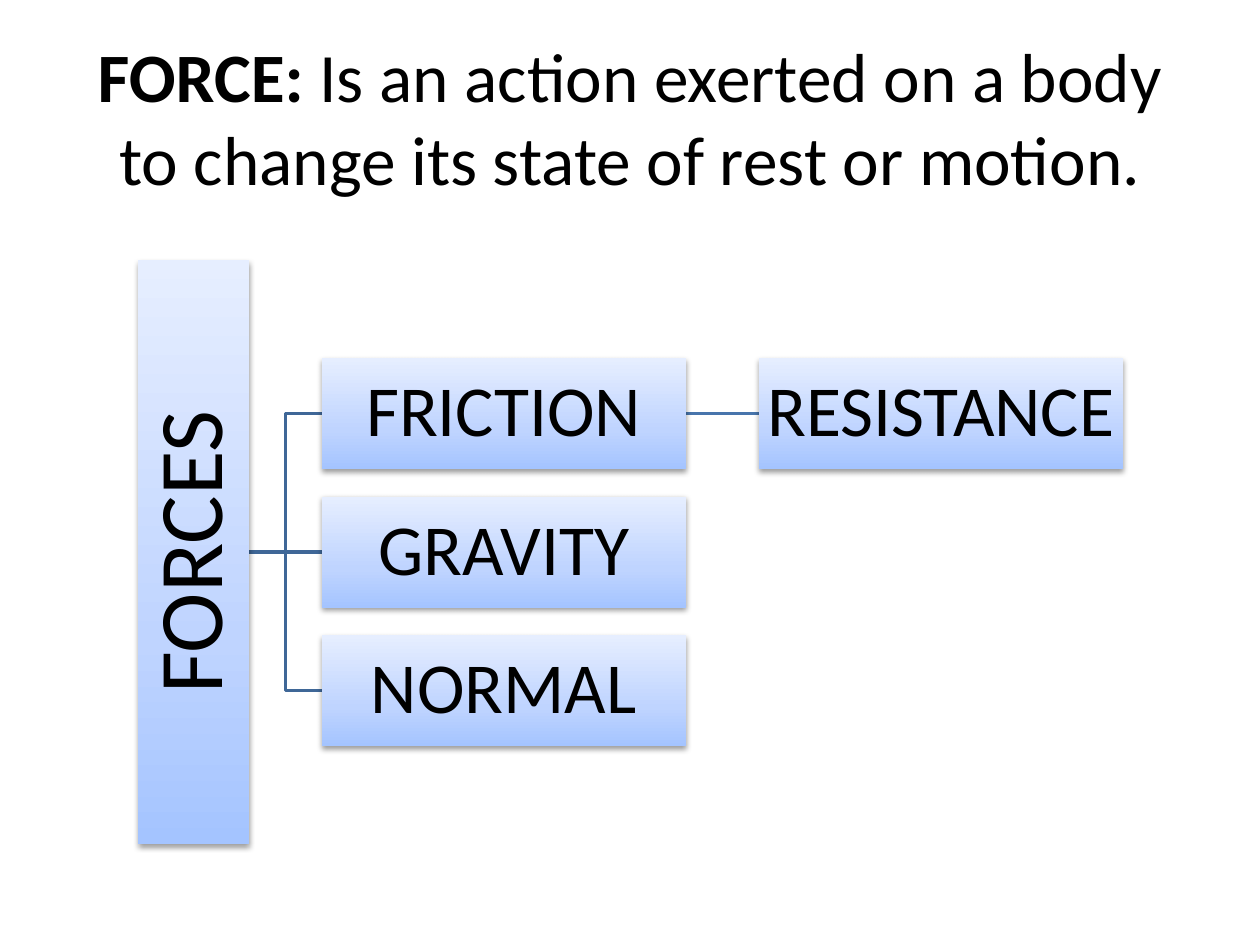
from pptx import Presentation
from pptx.dml.color import RGBColor
from pptx.enum.shapes import MSO_CONNECTOR as Link, MSO_SHAPE as Form
from pptx.enum.text import MSO_ANCHOR as Anchor, PP_ALIGN as Align
from pptx.oxml import parse_xml
from pptx.oxml.ns import nsdecls, qn
from pptx.util import Cm, Pt


def color(code):
    return RGBColor.from_string(code)


class Deck:
    font = "Calibri"
    ink = "000000"
    stops = ((0, "A4C4FF"), (35, "BFD4FF"), (100, "E6EEFF"))

    def __init__(self, wide, high):
        self.prs = Presentation()
        self.prs.slide_width, self.prs.slide_height = Cm(wide), Cm(high)
        self.slide = self.prs.slides.add_slide(self.prs.slide_layouts[6])

    def label(self, shape, runs, size, inset, gap=1.0):
        """Fill a shape with one centred paragraph of (text, bold) runs."""
        frame = shape.text_frame
        frame.word_wrap = True
        frame.vertical_anchor = Anchor.MIDDLE
        frame.margin_left = frame.margin_right = Cm(inset)
        frame.margin_top = frame.margin_bottom = Cm(inset)
        para = frame.paragraphs[0]
        para.alignment = Align.CENTER
        para.line_spacing = gap
        for text, bold in runs:
            run = para.add_run()
            run.text = text
            run.font.name, run.font.size = self.font, Pt(size)
            run.font.bold = bold
            run.font.color.rgb = color(self.ink)

    def title(self, runs, x, y, wide, high, size):
        box = self.slide.shapes.add_textbox(Cm(x), Cm(y), Cm(wide), Cm(high))
        self.label(box, runs, size, 0.2)

    def shade(self, shape):
        """Give an upright gradient and a soft shadow, even when turned."""
        shape.line.fill.background()
        shape.shadow.inherit = False
        marks = "".join(
            f'<a:gs pos="{pos * 1000}"><a:srgbClr val="{code}"/></a:gs>'
            for pos, code in self.stops)
        props = shape.element.spPr
        props.find(qn("a:prstGeom")).addnext(parse_xml(
            f'<a:gradFill {nsdecls("a")} rotWithShape="0"><a:gsLst>{marks}'
            '</a:gsLst><a:lin ang="16200000" scaled="0"/></a:gradFill>'))
        props.find(qn("a:effectLst")).append(parse_xml(
            f'<a:outerShdw {nsdecls("a")} blurRad="40000" dist="20000" '
            'dir="5400000" rotWithShape="0"><a:srgbClr val="000000">'
            '<a:alpha val="38000"/></a:srgbClr></a:outerShdw>'))

    def box(self, text, x, y, wide, high, size, inset=0.08, turn=0):
        """Draw a labelled box centred on x, y."""
        shape = self.slide.shapes.add_shape(
            Form.RECTANGLE, Cm(x - wide / 2), Cm(y - high / 2),
            Cm(wide), Cm(high))
        shape.rotation = turn
        self.shade(shape)
        self.label(shape, [(text, False)], size, inset, 0.9)

    def line(self, x, y, end, code):
        wire = self.slide.shapes.add_connector(
            Link.STRAIGHT, Cm(x), Cm(y), Cm(end), Cm(y))
        wire.line.color.rgb, wire.line.width = color(code), Pt(2)
        wire.element.spPr.append(parse_xml(f'<a:effectLst {nsdecls("a")}/>'))

    def elbow(self, x, y, end, drop, code):
        mid = (x + end) / 2
        bend = self.slide.shapes.build_freeform(Cm(x), Cm(y))
        bend.add_line_segments(
            [(Cm(a), Cm(b)) for a, b in ((mid, y), (mid, drop), (end, drop))],
            close=False)
        shape = bend.convert_to_shape()
        shape.fill.background()
        shape.shadow.inherit = False
        shape.line.color.rgb, shape.line.width = color(code), Pt(2)


def main():
    deck = Deck(25.4, 19.05)
    deck.title([("FORCE:", True),
                (" Is an action exerted on a body to change its state of "
                 "rest or motion.", False)], 1.27, 0.76, 22.86, 3.18, 39.6)

    wide, high, gap = 7.34, 2.24, 1.47
    root, mid, step = 3.9, 11.13, 2.79
    edge = root + high / 2
    left = edge + gap
    right = left + wide
    kinds = ("FRICTION", "GRAVITY", "NORMAL")
    rows = [mid + step * (i - 1) for i in range(len(kinds))]

    for y in (rows[2], rows[0]):
        deck.elbow(edge, mid, left, y, "3F6797")
    deck.line(edge, mid, left, "3F6797")
    deck.line(right, rows[0], right + gap, "4875AC")

    deck.box("FORCES", root, mid, 11.76, high, 52, 0.1, 270)
    for kind, y in zip(kinds, rows):
        deck.box(kind, left + wide / 2, y, wide, high, 41)
    deck.box("RESISTANCE", right + gap + wide / 2, rows[0], wide, high, 41)
    deck.prs.save("out.pptx")


if __name__ == "__main__":
    main()
